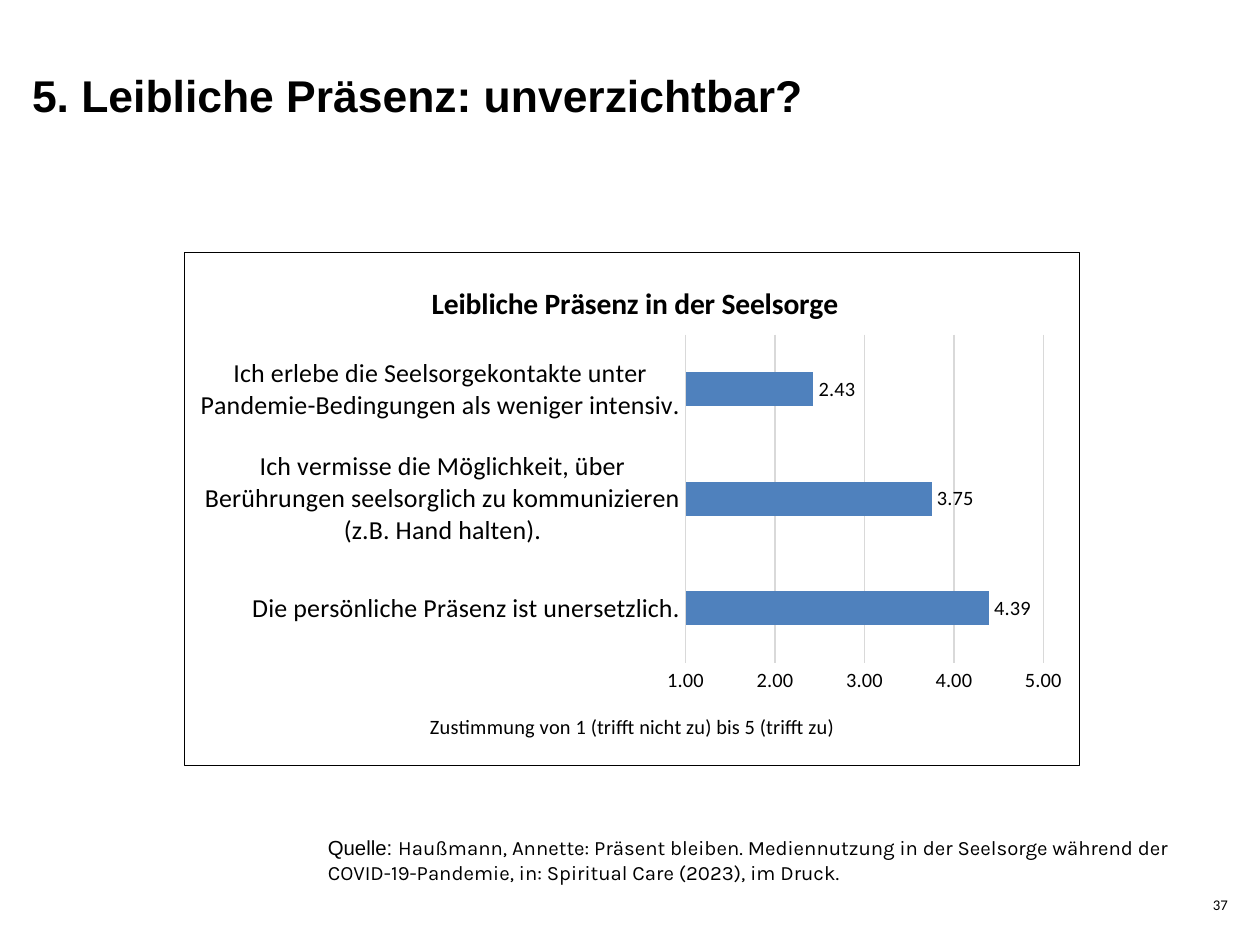
from lxml import etree
from pptx import Presentation
from pptx import util as u
from pptx.chart import data
from pptx.dml.color import RGBColor
from pptx.enum import chart as ch, text
from pptx.oxml import parse_xml
from pptx.oxml.ns import nsdecls, qn

BLACK, GRAY, BLUE = "000000", "D9D9D9", "4F81BD"
FORMAT = "###0.00"


def paint(target, color):
    target.solid()
    target.fore_color.rgb = RGBColor.from_string(color)


def style(font, size, name="Calibri", bold=False):
    font.size, font.name, font.bold = u.Pt(size), name, bold
    paint(font.fill, BLACK)


def add_box(slide, box, inset=True):
    frame = slide.shapes.add_textbox(*map(u.Inches, box)).text_frame
    frame.word_wrap = True
    if not inset:
        frame.margin_left = frame.margin_right = 0
        frame.margin_top = frame.margin_bottom = 0
    return frame


def add_line(slide, box, words, size, name, bold=False):
    frame = add_box(slide, box, inset=False)
    par = frame.paragraphs[0]
    par.text = words
    style(par.font, size, name, bold)
    return frame, par


def place(parent, index, **parts):
    """Put a manual layout, in fractions of the chart, into a chart part."""
    for old in parent.findall(qn("c:layout")):
        parent.remove(old)
    layout = etree.Element(qn("c:layout"))
    manual = etree.SubElement(layout, qn("c:manualLayout"))
    if "w" in parts:
        etree.SubElement(manual, qn("c:layoutTarget")).set("val", "inner")
    for side in ("xMode", "yMode"):
        etree.SubElement(manual, qn("c:" + side)).set("val", "edge")
    for key, part in parts.items():
        etree.SubElement(manual, qn("c:" + key)).set("val", str(part))
    parent.insert(index, layout)


def set_title(owner, words, size, bold, x, y):
    title = owner.chart_title if hasattr(owner, "chart_title") else owner.axis_title
    par = title.text_frame.paragraphs[0]
    par.text = words
    style(par.font, size, bold=bold)
    place(title._element, 1, x=x, y=y)


def add_bars(slide, box):
    table = data.CategoryChartData(number_format=FORMAT)
    table.categories = [
        "Die persönliche Präsenz ist unersetzlich.",
        "Ich vermisse die Möglichkeit, über Berührungen seelsorglich "
        "zu kommunizieren (z.B. Hand halten).",
        "Ich erlebe die Seelsorgekontakte unter Pandemie-Bedingungen "
        "als weniger intensiv.",
    ]
    table.add_series("Series 1", [4.39, 3.75, 2.43])
    chart = slide.shapes.add_chart(
        ch.XL_CHART_TYPE.BAR_CLUSTERED, *map(u.Inches, box), table).chart
    style(chart.font, 10)
    chart.has_legend = False
    set_title(chart, "Leibliche Präsenz in der Seelsorge", 16, True, 0.27, 0.05)

    # Bars and their values
    plot = chart.plots[0]
    plot.gap_width = 219
    plot.vary_by_categories = False
    paint(plot.series[0].format.fill, BLUE)
    plot.has_data_labels = True
    labels = plot.data_labels
    labels.show_value = True
    labels.position = ch.XL_LABEL_POSITION.OUTSIDE_END
    labels.number_format, labels.number_format_is_linked = FORMAT, False
    style(labels.font, 11)

    # Axes
    cat, val = chart.category_axis, chart.value_axis
    for axis, size in ((cat, 14), (val, 11)):
        axis.major_tick_mark = axis.minor_tick_mark = ch.XL_TICK_MARK.NONE
        style(axis.tick_labels.font, size)
    val.minimum_scale, val.maximum_scale, val.major_unit = 1, 5, 1
    val.tick_labels.number_format = FORMAT
    val.tick_labels.number_format_is_linked = False
    val.format.line.fill.background()
    for line in (cat.format.line, val.major_gridlines.format.line):
        paint(line.fill, GRAY)
        line.width = u.Pt(0.75)
    set_title(val, "Zustimmung von 1 (trifft nicht zu) bis 5 (trifft zu)",
              11, False, 0.27, 0.89)

    # Plot area and frame
    space = chart._chartSpace
    place(space.chart.plotArea, 0, x=0.56, y=0.16, w=0.4, h=0.64)
    space.chart.addnext(parse_xml(
        f'<c:spPr {nsdecls("c", "a")}><a:noFill/><a:ln w="9525"><a:solidFill>'
        f'<a:srgbClr val="{BLACK}"/></a:solidFill></a:ln></c:spPr>'))


def add_source(slide, box):
    par = add_box(slide, box).paragraphs[0]
    for words, name in (
        ("Quelle: ", "Arial"),
        ("Haußmann, Annette: Präsent bleiben. Mediennutzung in der Seelsorge "
         "während der COVID-19-Pandemie, in: Spiritual Care (2023), im Druck.",
         "Karla"),
    ):
        run = par.add_run()
        run.text = words
        style(run.font, 11, name)


def add_number(slide, box):
    frame, par = add_line(slide, box, "37", 8, "Calibri")
    frame.vertical_anchor = text.MSO_ANCHOR.BOTTOM
    par.alignment = text.PP_ALIGN.RIGHT


def add_heading(slide, box):
    par = add_line(slide, box, "5. Leibliche Präsenz: unverzichtbar?",
                   24, "Arial", True)[1]
    par.line_spacing = u.Pt(29)


def main():
    deck = Presentation()
    deck.slide_width, deck.slide_height = u.Inches(9.45), u.Inches(7.09)
    slide = deck.slides.add_slide(deck.slide_layouts[6])
    add_heading(slide, (0.24, 0.51, 6.58, 1.18))
    add_number(slide, (6.77, 6.69, 2.44, 0.16))
    add_bars(slide, (1.38, 1.89, 6.72, 3.86))
    add_source(slide, (2.36, 6.22, 6.58, 0.47))
    deck.save("out.pptx")


if __name__ == "__main__":
    main()
